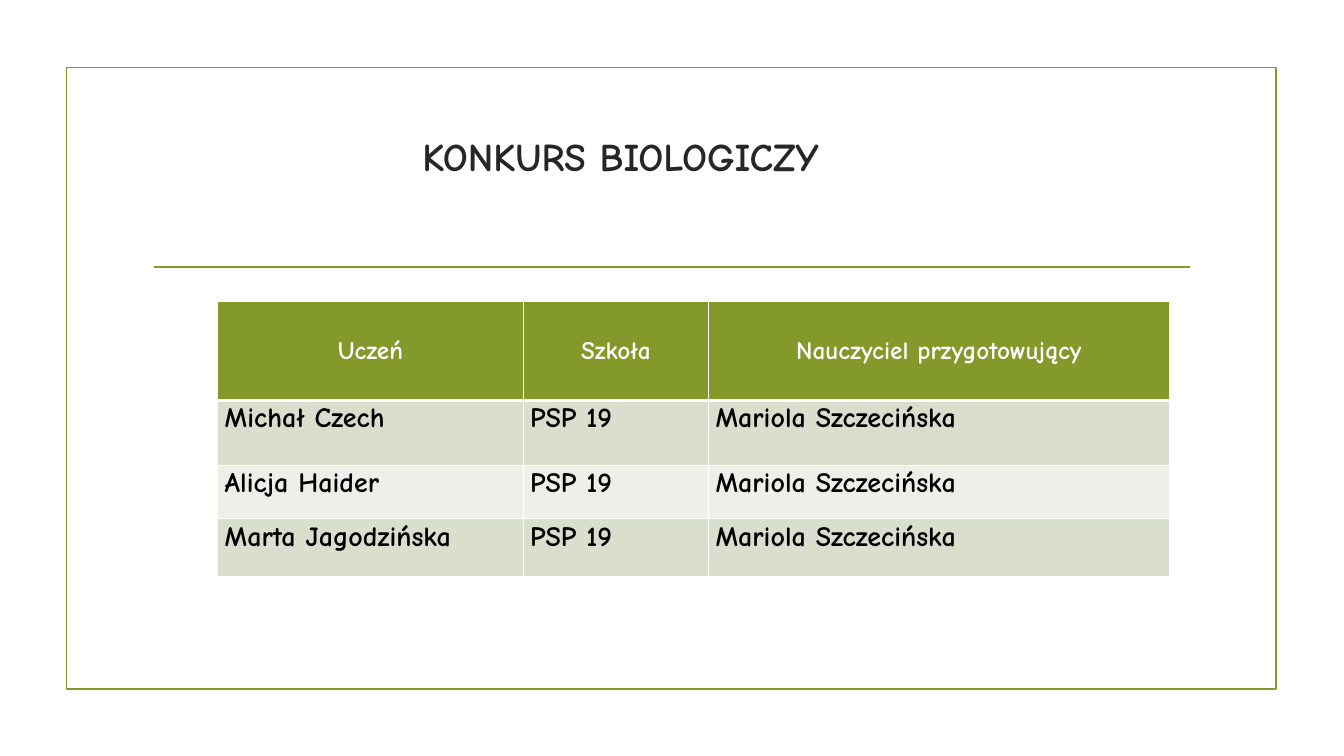
from lxml import etree
from pptx import Presentation
from pptx import util as u
from pptx.dml.color import RGBColor
from pptx.enum import shapes, text
from pptx.oxml import ns

Pt = u.Pt
OLIVE = RGBColor(0x83, 0x99, 0x2A)
SAGE = RGBColor(0xD9, 0xDE, 0xCD)
PALE = RGBColor(0xED, 0xEF, 0xE8)
WHITE = RGBColor(0xFF, 0xFF, 0xFF)
BLACK = RGBColor(0, 0, 0)
CHARCOAL = RGBColor(0x26, 0x26, 0x26)
FONT = "Comic Neue"

HEADERS = ["Uczeń", "Szkoła", "Nauczyciel przygotowujący"]
RESULTS = [
    ["Michał Czech", "PSP 19", "Mariola Szczecińska"],
    ["Alicja Haider", "PSP 19", "Mariola Szczecińska"],
    ["Marta Jagodzińska", "PSP 19", "Mariola Szczecińska"],
]
COLUMN_SHARES = [3.03, 1.84, 4.57]
ROW_SHARES = [0.98, 0.64, 0.53, 0.57]


def add_text(paragraph, words, size, color):
    run = paragraph.add_run()
    run.text = words
    run.font.name = FONT
    run.font.size = Pt(size)
    run.font.bold = True
    run.font.color.rgb = color


def set_border(cell, side, width):
    line = etree.SubElement(cell._tc.get_or_add_tcPr(), ns.qn(f"a:ln{side}"), w=str(Pt(width)))
    fill = etree.SubElement(line, ns.qn("a:solidFill"))
    etree.SubElement(fill, ns.qn("a:srgbClr"), val=str(WHITE))


def add_frame(slide, left, top, width, height):
    frame = slide.shapes.add_shape(
        shapes.MSO_SHAPE.RECTANGLE, Pt(left), Pt(top), Pt(width), Pt(height))
    frame.shadow.inherit = False
    frame.fill.background()
    frame.line.color.rgb = OLIVE
    frame.line.width = Pt(1.25)

    rule_left, rule_top, rule_width = left + 62.6, top + 142.6, 740
    rule = slide.shapes.add_connector(
        shapes.MSO_CONNECTOR.STRAIGHT, Pt(rule_left), Pt(rule_top),
        Pt(rule_left + rule_width), Pt(rule_top))
    rule.line.color.rgb = OLIVE
    rule.line.width = Pt(1.25)
    etree.SubElement(rule._element.spPr, ns.qn("a:effectLst"))


def add_title(slide, left, top, width, height):
    title = slide.shapes.title
    title.left, title.top, title.width, title.height = Pt(left), Pt(top), Pt(width), Pt(height)
    frame = title.text_frame
    frame.word_wrap = True
    frame.vertical_anchor = text.MSO_ANCHOR.MIDDLE
    paragraph = frame.paragraphs[0]
    paragraph.alignment = text.PP_ALIGN.CENTER
    add_text(paragraph, "KONKURS BIOLOGICZY", 28, CHARCOAL)


def fill_cell(cell, words, row_index):
    is_header = row_index == 0
    side_margin, end_margin = (5.76, 3.6) if is_header else (5.04, 0)
    cell.margin_left = cell.margin_right = Pt(side_margin)
    cell.margin_top = cell.margin_bottom = Pt(end_margin)
    for side in "LR":
        set_border(cell, side, 1)
    set_border(cell, "T", 3 if row_index == 1 else 1)
    set_border(cell, "B", 3 if is_header else 1)
    cell.fill.solid()
    paragraph = cell.text_frame.paragraphs[0]
    if is_header:
        cell.fill.fore_color.rgb = OLIVE
        cell.vertical_anchor = text.MSO_ANCHOR.MIDDLE
        paragraph.alignment = text.PP_ALIGN.CENTER
        add_text(paragraph, words, 18, WHITE)
    else:
        cell.fill.fore_color.rgb = SAGE if row_index % 2 else PALE
        cell.vertical_anchor = text.MSO_ANCHOR.TOP
        paragraph.line_spacing = 1.07
        add_text(paragraph, words, 20, BLACK)


def add_results(slide, left, top, width, height):
    rows = [HEADERS] + RESULTS
    table = slide.shapes.add_table(
        len(rows), len(HEADERS), Pt(left), Pt(top), Pt(width), Pt(height)).table
    for column, share in zip(table.columns, COLUMN_SHARES):
        column.width = Pt(width * share / sum(COLUMN_SHARES))
    for row, share in zip(table.rows, ROW_SHARES):
        row.height = Pt(height * share / sum(ROW_SHARES))
    for row_index, entries in enumerate(rows):
        for column_index, words in enumerate(entries):
            fill_cell(table.cell(row_index, column_index), words, row_index)


def main():
    presentation = Presentation()
    presentation.slide_width = Pt(960)
    presentation.slide_height = Pt(540)
    slide = presentation.slides.add_slide(presentation.slide_layouts[5])
    add_frame(slide, 47.5, 48.2, 864, 444.2)
    add_title(slide, 51.1, 61.2, 784, 100.8)
    add_results(slide, 155.5, 215.3, 679.7, 196.5)
    presentation.save("out.pptx")


if __name__ == "__main__":
    main()
